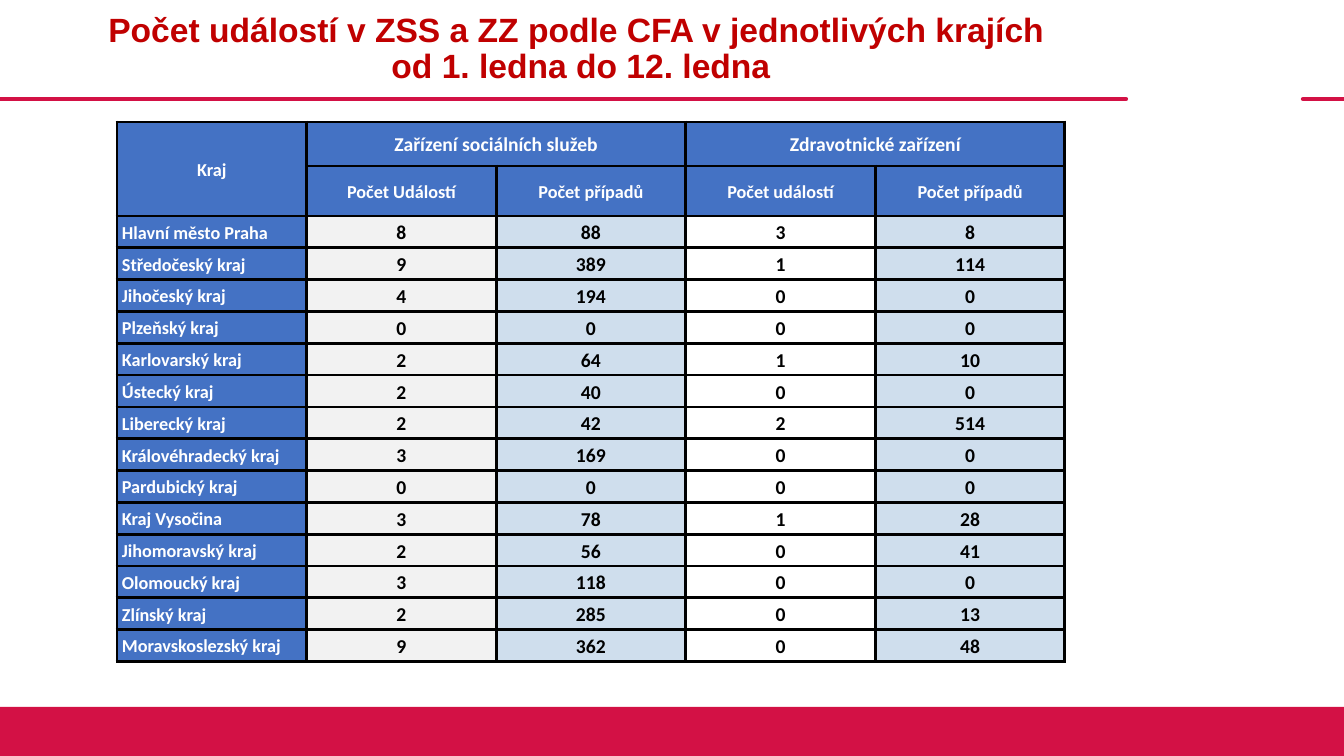
from lxml import etree
from pptx import Presentation
from pptx.dml.color import RGBColor
from pptx.enum.shapes import MSO_CONNECTOR, MSO_SHAPE
from pptx.enum.text import MSO_ANCHOR, PP_ALIGN
from pptx.oxml import parse_xml
from pptx.oxml.ns import qn
from pptx.util import Pt

STRAIGHT, RECTANGLE = MSO_CONNECTOR.STRAIGHT, MSO_SHAPE.RECTANGLE
MIDDLE = MSO_ANCHOR.MIDDLE
LEFT, CENTER = PP_ALIGN.LEFT, PP_ALIGN.CENTER

WHITE = RGBColor(0xFF, 0xFF, 0xFF)
BLACK = RGBColor(0x00, 0x00, 0x00)
CRIMSON = RGBColor(0xD3, 0x11, 0x45)
TITLE_RED = RGBColor(0xC0, 0x00, 0x00)
HEADER_BLUE = RGBColor(0x44, 0x72, 0xC4)
PALE_GRAY = RGBColor(0xF2, 0xF2, 0xF2)
PALE_BLUE = RGBColor(0xCF, 0xDE, 0xED)

SCALE = 914400 / 100.8
SLIDE_WIDTH, SLIDE_HEIGHT = 1344, 756
DRAWING_NS = "http://schemas.openxmlformats.org/drawingml/2006/main"

TITLE = ("Počet událostí v ZSS a ZZ podle CFA v jednotlivých krajích \v"
         "od 1. ledna do 12. ledna")
GROUPS = ["Zařízení sociálních služeb", "Zdravotnické zařízení"]
MEASURES = ["Počet Událostí", "Počet případů", "Počet událostí", "Počet případů"]
REGIONS = [
    ("Hlavní město Praha", 8, 88, 3, 8),
    ("Středočeský kraj", 9, 389, 1, 114),
    ("Jihočeský kraj", 4, 194, 0, 0),
    ("Plzeňský kraj", 0, 0, 0, 0),
    ("Karlovarský kraj", 2, 64, 1, 10),
    ("Ústecký kraj", 2, 40, 0, 0),
    ("Liberecký kraj", 2, 42, 2, 514),
    ("Královéhradecký kraj", 3, 169, 0, 0),
    ("Pardubický kraj", 0, 0, 0, 0),
    ("Kraj Vysočina", 3, 78, 1, 28),
    ("Jihomoravský kraj", 2, 56, 0, 41),
    ("Olomoucký kraj", 3, 118, 0, 0),
    ("Zlínský kraj", 2, 285, 0, 13),
    ("Moravskoslezský kraj", 9, 362, 0, 48),
]
COUNT_FILLS = [PALE_GRAY, PALE_BLUE, None, PALE_BLUE]

TITLE_FONT = {"name": "Arial", "size": Pt(24), "bold": True}
LABEL_FONT = {"name": "Calibri", "size": Pt(13), "bold": True}
LARGE_FONT = {**LABEL_FONT, "size": Pt(14)}
LABEL_MARGINS = {"margin_left": 5, "margin_right": 5, "margin_top": 1, "margin_bottom": 0}
COUNT_MARGINS = {**LABEL_MARGINS, "margin_left": 1, "margin_right": 1}


def px(length):
    return round(length * SCALE)


def write(frame, text, font, color, align, spacing):
    para = frame.paragraphs[0]
    para.alignment, para.line_spacing = align, spacing
    if "\v" in text:
        first, second = text.split("\v")
        para.add_run().text = first
        para.add_line_break()
        para.add_run().text = second
    else:
        para.add_run().text = text
    for span in para.runs:
        for name, value in font.items():
            setattr(span.font, name, value)
        span.font.color.rgb = color


def add_rule(page, left, right, y):
    rule = page.shapes.add_connector(STRAIGHT, px(left), px(y), px(right), px(y))
    rule.line.color.rgb = CRIMSON
    rule.line.width = Pt(3)
    properties = rule._element.spPr
    properties.get_or_add_ln().set("cap", "rnd")
    etree.SubElement(properties, qn("a:effectLst"))


def add_frame(page, width, height):
    # Rules under the title, with a gap towards the right
    for left, right in [(0, 1126), (1303, width)]:
        add_rule(page, left, right, 99)
    # Footer band
    band_height = 49
    band = page.shapes.add_shape(RECTANGLE, 0, px(height - band_height),
                                 px(width), px(band_height))
    band.shadow.inherit = False
    band.fill.solid()
    band.fill.fore_color.rgb = CRIMSON
    band.line.fill.background()


def add_title(page, left, top, width, height):
    box = page.shapes.add_textbox(px(left), px(top), px(width), px(height))
    frame = box.text_frame
    frame.word_wrap = True
    frame.vertical_anchor = MIDDLE
    write(frame, TITLE, TITLE_FONT, TITLE_RED, CENTER, 0.9)


def add_borders(cell):
    properties = cell._tc.get_or_add_tcPr()
    for side in ("lnL", "lnR", "lnT", "lnB"):
        properties.append(parse_xml(
            f'<a:{side} xmlns:a="{DRAWING_NS}" w="{Pt(2.25)}">'
            f'<a:solidFill><a:srgbClr val="{BLACK}"/></a:solidFill></a:{side}>'))


def fill_cell(cell, text, font, color, fill, margins, align=CENTER, spacing=1.06):
    for name, value in margins.items():
        setattr(cell, name, px(value))
    cell.vertical_anchor = MIDDLE
    if fill is None:
        cell.fill.background()
    else:
        cell.fill.solid()
        cell.fill.fore_color.rgb = fill
    write(cell.text_frame, text, font, color, align, spacing)


def add_region_table(page, left, top, width, height):
    header_heights = [44, 50]
    row_count, column_count = len(header_heights) + len(REGIONS), 1 + len(MEASURES)
    table = page.shapes.add_table(row_count, column_count, px(left), px(top),
                                  px(width), px(height)).table
    table.first_row = table.horz_banding = False
    for column in table.columns:
        column.width = px(width / column_count)
    region_height = (height - sum(header_heights)) / len(REGIONS)
    for row, row_height in zip(table.rows, header_heights + [region_height] * len(REGIONS)):
        row.height = px(row_height)
    for cell in table.iter_cells():
        add_borders(cell)

    # Header rows
    header = {"color": WHITE, "fill": HEADER_BLUE, "margins": LABEL_MARGINS}
    table.cell(0, 0).merge(table.cell(1, 0))
    fill_cell(table.cell(0, 0), "Kraj", LABEL_FONT, **header)
    for index, group in enumerate(GROUPS):
        first = 1 + 2 * index
        table.cell(0, first).merge(table.cell(0, first + 1))
        fill_cell(table.cell(0, first), group, LARGE_FONT, **header)
    for column, measure in enumerate(MEASURES, 1):
        fill_cell(table.cell(1, column), measure, LABEL_FONT, **header)

    # One row per region
    for row, (region, *counts) in enumerate(REGIONS, len(header_heights)):
        fill_cell(table.cell(row, 0), region, LABEL_FONT, align=LEFT, **header)
        for column, (count, fill) in enumerate(zip(counts, COUNT_FILLS), 1):
            fill_cell(table.cell(row, column), str(count), LARGE_FONT, BLACK, fill,
                      COUNT_MARGINS, spacing=1.07)


def main():
    deck = Presentation()
    deck.slide_width, deck.slide_height = px(SLIDE_WIDTH), px(SLIDE_HEIGHT)
    page = deck.slides.add_slide(deck.slide_layouts[6])
    add_frame(page, SLIDE_WIDTH, SLIDE_HEIGHT)
    add_title(page, 36, 0, 1090, 99)
    add_region_table(page, 117, 122, 948, 540)
    deck.save("out.pptx")


if __name__ == "__main__":
    main()
